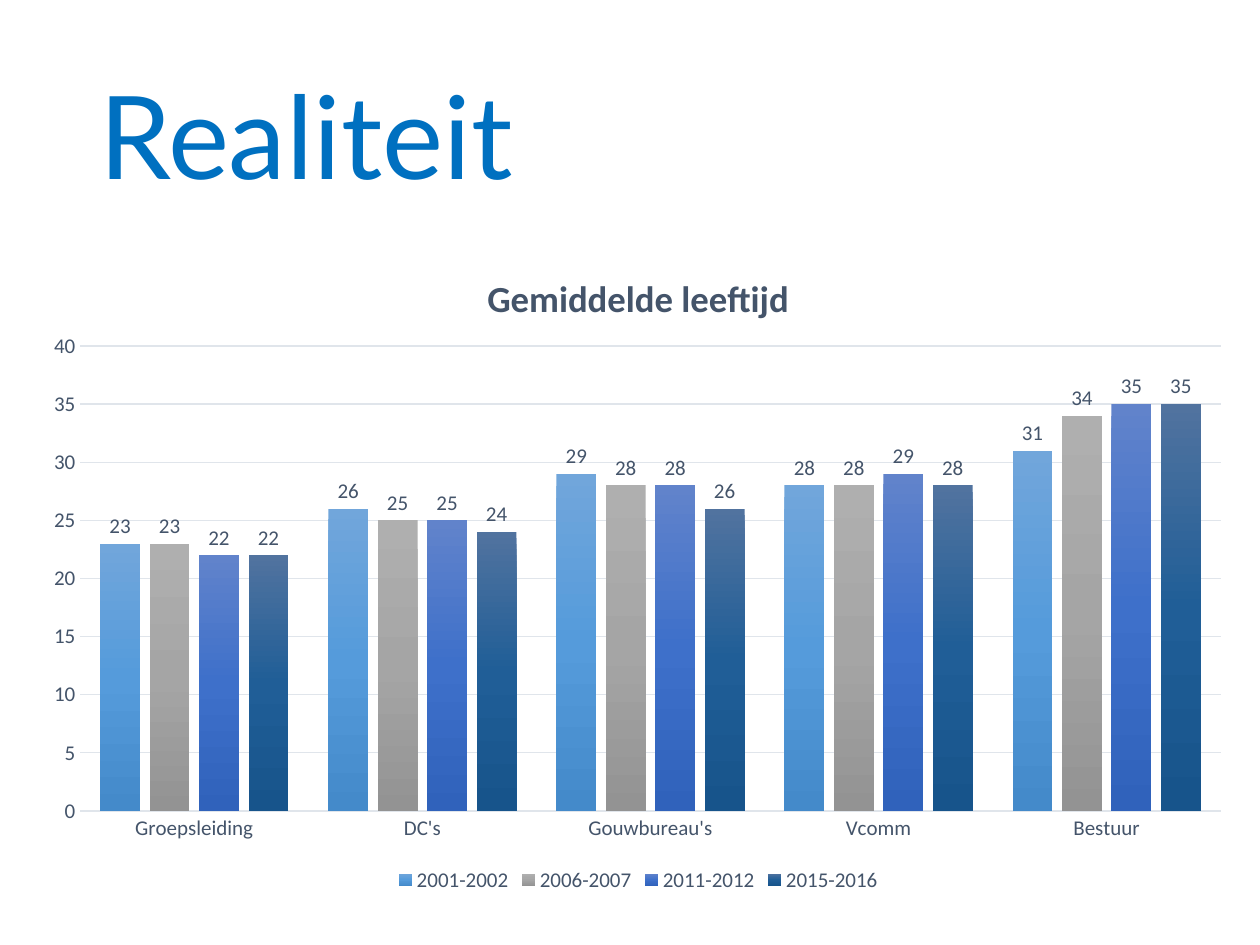
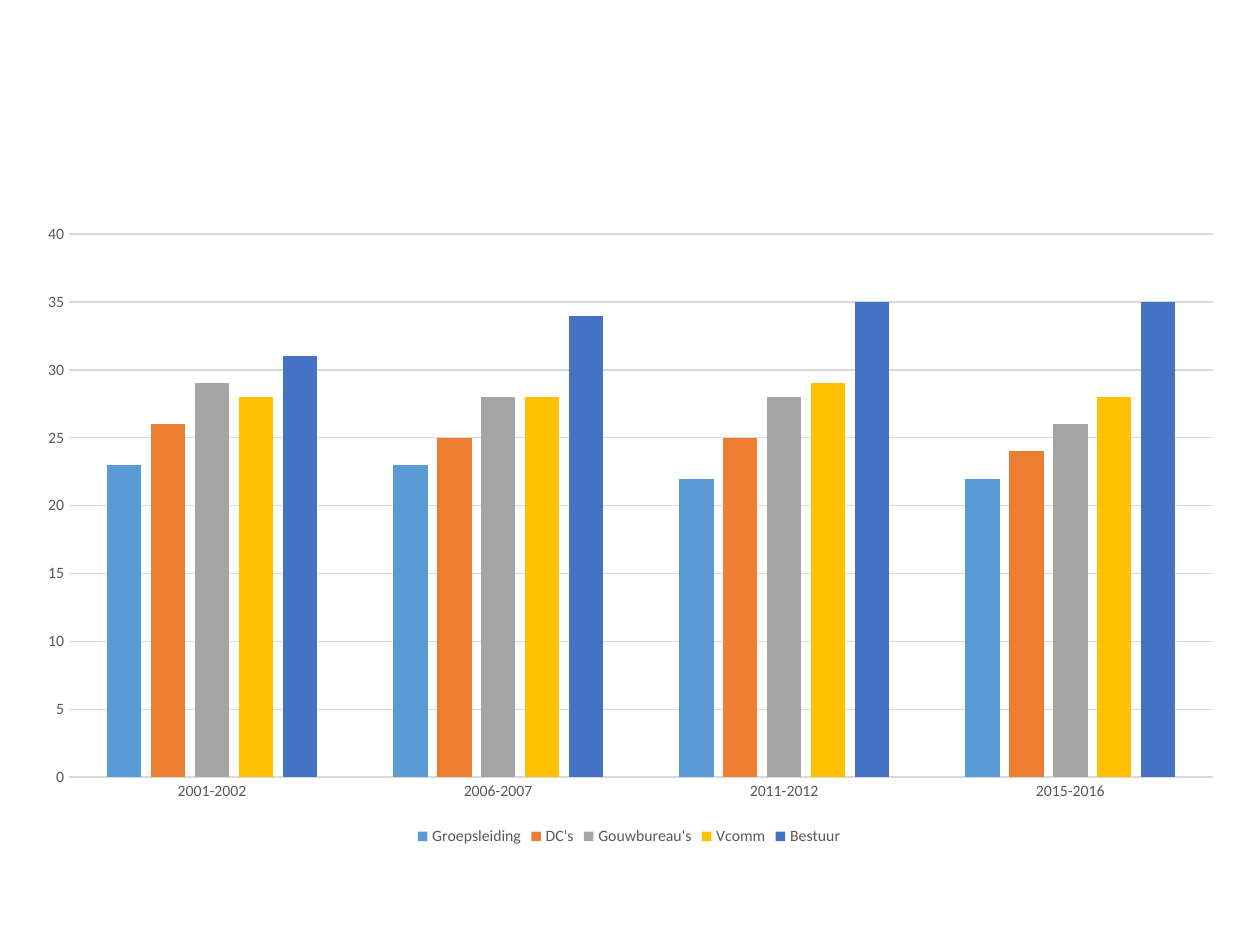
from dataclasses import dataclass

from lxml import etree
from pptx import Presentation
from pptx import util as u
from pptx.chart.data import CategoryChartData
from pptx.dml.color import RGBColor
from pptx.enum import chart as charts
from pptx.enum import text
from pptx.oxml import ns

COLOURS = {
    "title": "0070C0", "slate": "44546A", "slate_grid": "E0E5EB",
    "grey": "595959", "grey_grid": "D9D9D9",
}
TITLE_FONT, CHART_FONT = "Lato", "Calibri"

# Average age per group in each working year
YEARS = ["2001-2002", "2006-2007", "2011-2012", "2015-2016"]
AGES = {
    "Groepsleiding": [23, 23, 22, 22],
    "DC's": [26, 25, 25, 24],
    "Gouwbureau's": [29, 28, 28, 26],
    "Vcomm": [28, 28, 29, 28],
    "Bestuur": [31, 34, 35, 35],
}
BY_YEAR = dict(zip(YEARS, map(list, zip(*AGES.values()))))


@dataclass
class AgeChart:
    """Clustered columns; a fill of several colours is a vertical gradient."""
    frame: tuple[float, float, float, float]  # cm
    plot: tuple[float, float, float, float]  # shares of the chart
    categories: list[str]
    series: dict[str, list[int]]
    fills: list[tuple[str, ...]]
    size: int
    ink: str
    grid: str
    gap: int
    overlap: int
    title: str = ""
    labels: bool = False


AGE_BY_GROUP = AgeChart(
    frame=(0.64, 4.7, 24.46, 13.39), plot=(0.04, 0.17, 0.94, 0.7),
    categories=list(AGES), series=BY_YEAR,
    fills=[("71A6DB", "559BDB", "448ACA"), ("AFAFAF", "A5A5A5", "939393"),
           ("6183CB", "3E70CA", "3062BB"), ("51739F", "205E97", "17548B")],
    size=12, ink="slate", grid="slate_grid", gap=100, overlap=-24,
    title="Gemiddelde leeftijd", labels=True)

AGE_BY_YEAR = AgeChart(
    frame=(0.41, 4.27, 24.54, 12.88), plot=(0.04, 0.035, 0.94, 0.85),
    categories=YEARS, series=AGES,
    fills=[("5B9BD5",), ("ED7D31",), ("A5A5A5",), ("FFC000",), ("4472C4",)],
    size=9, ink="grey", grid="grey_grid", gap=219, overlap=-27)


def set_font(font, size: float, colour: str, name: str = CHART_FONT, bold: bool = False) -> None:
    font.name, font.size, font.bold = name, u.Pt(size), bold
    font.color.rgb = RGBColor.from_string(COLOURS[colour])


def set_line(line, colour: str) -> None:
    line.width = u.Pt(0.75)
    line.color.rgb = RGBColor.from_string(COLOURS[colour])


def set_layout(parent, index: int, **values: float | str) -> None:
    """Give a chart part a fixed place, in shares of the chart."""
    for old in parent.findall(ns.qn("c:layout")):
        parent.remove(old)
    layout = etree.Element(ns.qn("c:layout"))
    manual = etree.SubElement(layout, ns.qn("c:manualLayout"))
    for tag, value in values.items():
        etree.SubElement(manual, ns.qn(f"c:{tag}")).set("val", str(value))
    parent.insert(index, layout)


def set_fill(fill, colours: tuple[str, ...]) -> None:
    if len(colours) == 1:
        fill.solid()
        fill.fore_color.rgb = RGBColor.from_string(colours[0])
        return
    fill.gradient()
    fill.gradient_angle = 270
    stops = fill.gradient_stops[0]._gs.getparent()
    for stop in list(stops):
        stops.remove(stop)
    for number, colour in enumerate(colours):
        stop = etree.SubElement(stops, ns.qn("a:gs"))
        stop.set("pos", str(number * 100000 // (len(colours) - 1)))
        etree.SubElement(stop, ns.qn("a:srgbClr")).set("val", colour)


def add_title(page, words: str) -> None:
    box = page.shapes.title
    box.left, box.top, box.width, box.height = map(u.Cm, (1.75, 1.02, 21.89, 3.68))
    frame = box.text_frame
    frame.text = words
    frame.auto_size = text.MSO_AUTO_SIZE.NONE
    frame.vertical_anchor = text.MSO_ANCHOR.MIDDLE
    para = frame.paragraphs[0]
    para.alignment = text.PP_ALIGN.LEFT
    para.line_spacing = 0.9
    set_font(para.runs[0].font, 66, "title", TITLE_FONT)


def add_chart(page, item: AgeChart) -> None:
    data = CategoryChartData()
    data.categories = item.categories
    for name, values in item.series.items():
        data.add_series(name, values)
    chart = page.shapes.add_chart(
        charts.XL_CHART_TYPE.COLUMN_CLUSTERED, *map(u.Cm, item.frame), data).chart
    set_font(chart.font, item.size, item.ink)

    # Heading
    chart.has_title = bool(item.title)
    if item.title:
        frame = chart.chart_title.text_frame
        frame.text = item.title
        set_font(frame.paragraphs[0].runs[0].font, 21, item.ink, bold=True)
        set_layout(chart.chart_title._element, 1, xMode="edge", yMode="edge", x=0.37, y=0.05)

    # Columns
    plot = chart.plots[0]
    plot.gap_width, plot.overlap, plot.vary_by_categories = item.gap, item.overlap, False
    for series, colours in zip(plot.series, item.fills):
        series.invert_if_negative = False
        set_fill(series.format.fill, colours)
    if item.labels:
        plot.has_data_labels = True
        plot.data_labels.show_value = True
        plot.data_labels.position = charts.XL_LABEL_POSITION.OUTSIDE_END
        set_font(plot.data_labels.font, item.size, item.ink)
    x, y, w, h = item.plot
    set_layout(chart._chartSpace.chart.plotArea, 0, layoutTarget="inner",
               xMode="edge", yMode="edge", x=x, y=y, w=w, h=h)

    # Axes
    for axis in (chart.category_axis, chart.value_axis):
        axis.major_tick_mark = axis.minor_tick_mark = charts.XL_TICK_MARK.NONE
        set_font(axis.tick_labels.font, item.size, item.ink)
    set_line(chart.category_axis.format.line, item.grid)
    ages = chart.value_axis
    ages.minimum_scale, ages.maximum_scale, ages.major_unit = 0, 40, 5
    ages.format.line.fill.background()
    set_line(ages.major_gridlines.format.line, item.grid)

    # Legend
    chart.has_legend = True
    chart.legend.position = charts.XL_LEGEND_POSITION.BOTTOM
    chart.legend.include_in_layout = False
    set_font(chart.legend.font, item.size, item.ink)


def main() -> None:
    deck = Presentation()
    deck.slide_width, deck.slide_height = u.Cm(25.4), u.Cm(19.05)
    title_only, blank = deck.slide_layouts[5], deck.slide_layouts[6]

    # Ages per group
    page = deck.slides.add_slide(title_only)
    add_title(page, "Realiteit")
    add_chart(page, AGE_BY_GROUP)

    # Ages per year
    add_chart(deck.slides.add_slide(blank), AGE_BY_YEAR)

    deck.save("out.pptx")


if __name__ == "__main__":
    main()
